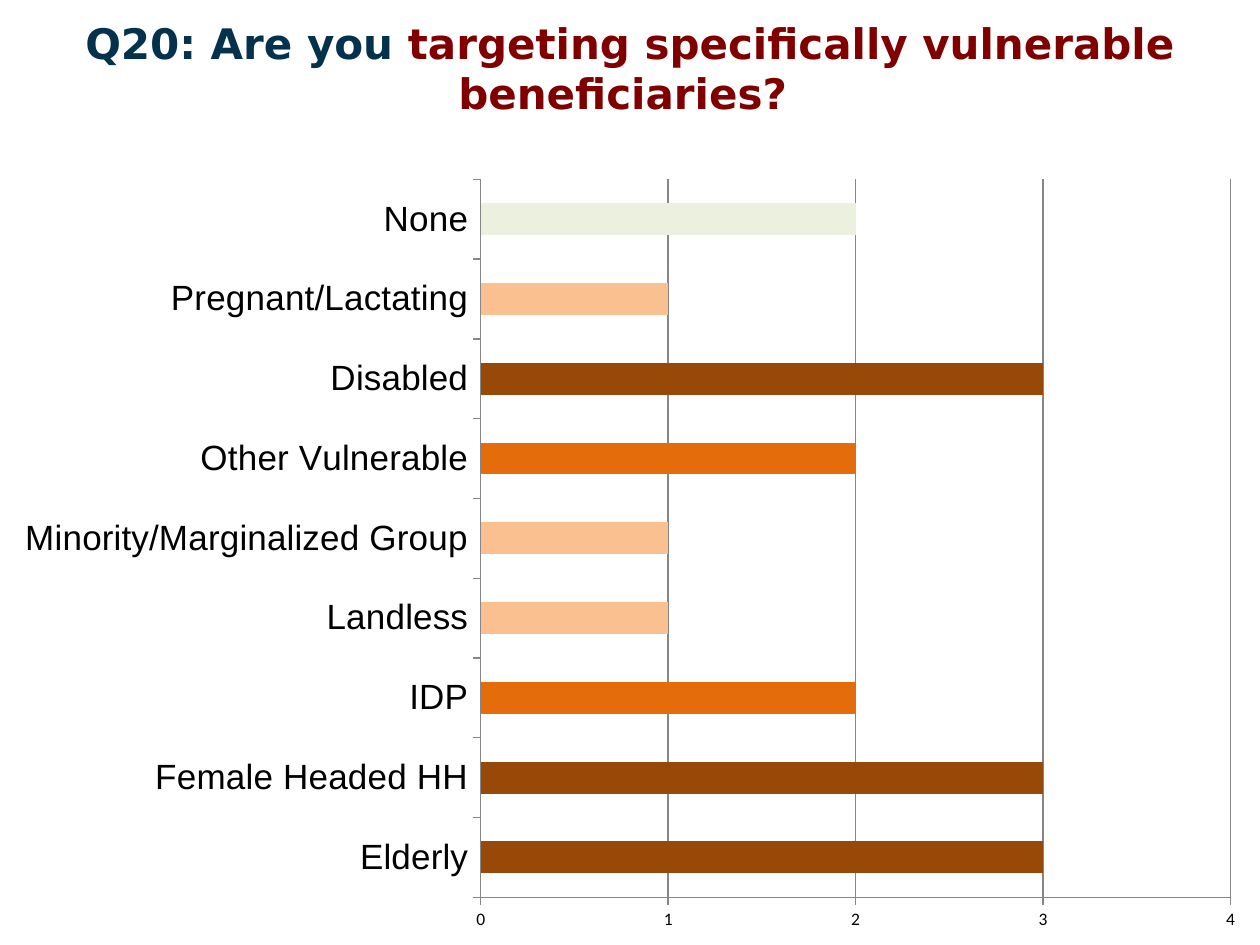
from pptx import Presentation
from pptx.chart.data import CategoryChartData
from pptx.dml.color import RGBColor
from pptx.enum.chart import XL_CHART_TYPE, XL_TICK_MARK
from pptx.enum.text import MSO_ANCHOR, PP_ALIGN
from pptx.util import Inches, Pt

COLORS = {
    "navy": "04314C", "maroon": "800000", "black": "000000", "grid": "868686",
    "none": "EBF1DE", "low": "FAC090", "medium": "E46C0A", "high": "984807",
}
TITLE = [
    ("Q20: Are you ", "navy"),
    ("targeting specifically vulnerable beneficiaries? ", "maroon"),
]
ANSWERS = [
    ("Elderly", 3),
    ("Female Headed HH", 3),
    ("IDP", 2),
    ("Landless", 1),
    ("Minority/Marginalized Group", 1),
    ("Other Vulnerable", 2),
    ("Disabled", 3),
    ("Pregnant/Lactating", 1),
    ("None", 2),
]
LEVELS = {1: "low", 2: "medium", 3: "high"}


def color(name):
    return RGBColor.from_string(COLORS[name])


def style_font(font, name, size, color_name):
    font.name = name
    font.size = Pt(size)
    font.color.rgb = color(color_name)


def add_title(slide, width):
    box = slide.shapes.add_textbox(0, Inches(0.14), width, Inches(0.79))
    frame = box.text_frame
    frame.word_wrap = True
    frame.vertical_anchor = MSO_ANCHOR.MIDDLE
    paragraph = frame.paragraphs[0]
    paragraph.alignment = PP_ALIGN.CENTER
    for text, color_name in TITLE:
        run = paragraph.add_run()
        run.text = text
        run.font.bold = True
        style_font(run.font, "DejaVu Sans", 24, color_name)


def add_answer_chart(slide, width, height):
    data = CategoryChartData()
    data.categories = [label for label, count in ANSWERS]
    data.add_series("Series 1", [count for label, count in ANSWERS])
    top = Inches(1.3)
    chart = slide.shapes.add_chart(
        XL_CHART_TYPE.BAR_CLUSTERED, 0, top, width, height - top, data
    ).chart
    chart.has_legend = False
    chart.has_title = False
    style_font(chart.font, "Calibri", 10, "black")

    for axis in (chart.category_axis, chart.value_axis):
        axis.major_tick_mark = XL_TICK_MARK.OUTSIDE
        axis.minor_tick_mark = XL_TICK_MARK.NONE
        axis.format.line.color.rgb = color("grid")
        axis.format.line.width = Pt(0.75)
    style_font(chart.category_axis.tick_labels.font, "Arial", 20, "black")

    values = chart.value_axis
    values.minimum_scale, values.maximum_scale, values.major_unit = 0, 4, 1
    values.has_major_gridlines = True
    values.major_gridlines.format.line.color.rgb = color("grid")
    values.major_gridlines.format.line.width = Pt(0.75)
    values.tick_labels.number_format = "0"
    values.tick_labels.number_format_is_linked = False

    plot = chart.plots[0]
    plot.gap_width = 150
    plot.vary_by_categories = False
    series = plot.series[0]
    series.format.fill.solid()
    series.format.fill.fore_color.rgb = color("medium")
    for index, (label, count) in enumerate(ANSWERS):
        fill = series.points[index].format.fill
        fill.solid()
        fill.fore_color.rgb = color("none" if label == "None" else LEVELS[count])


def main():
    presentation = Presentation()
    presentation.slide_width = Inches(10)
    presentation.slide_height = Inches(7.5)
    slide = presentation.slides.add_slide(presentation.slide_layouts[6])
    add_title(slide, presentation.slide_width)
    add_answer_chart(slide, presentation.slide_width, presentation.slide_height)
    presentation.save("out.pptx")


if __name__ == "__main__":
    main()
